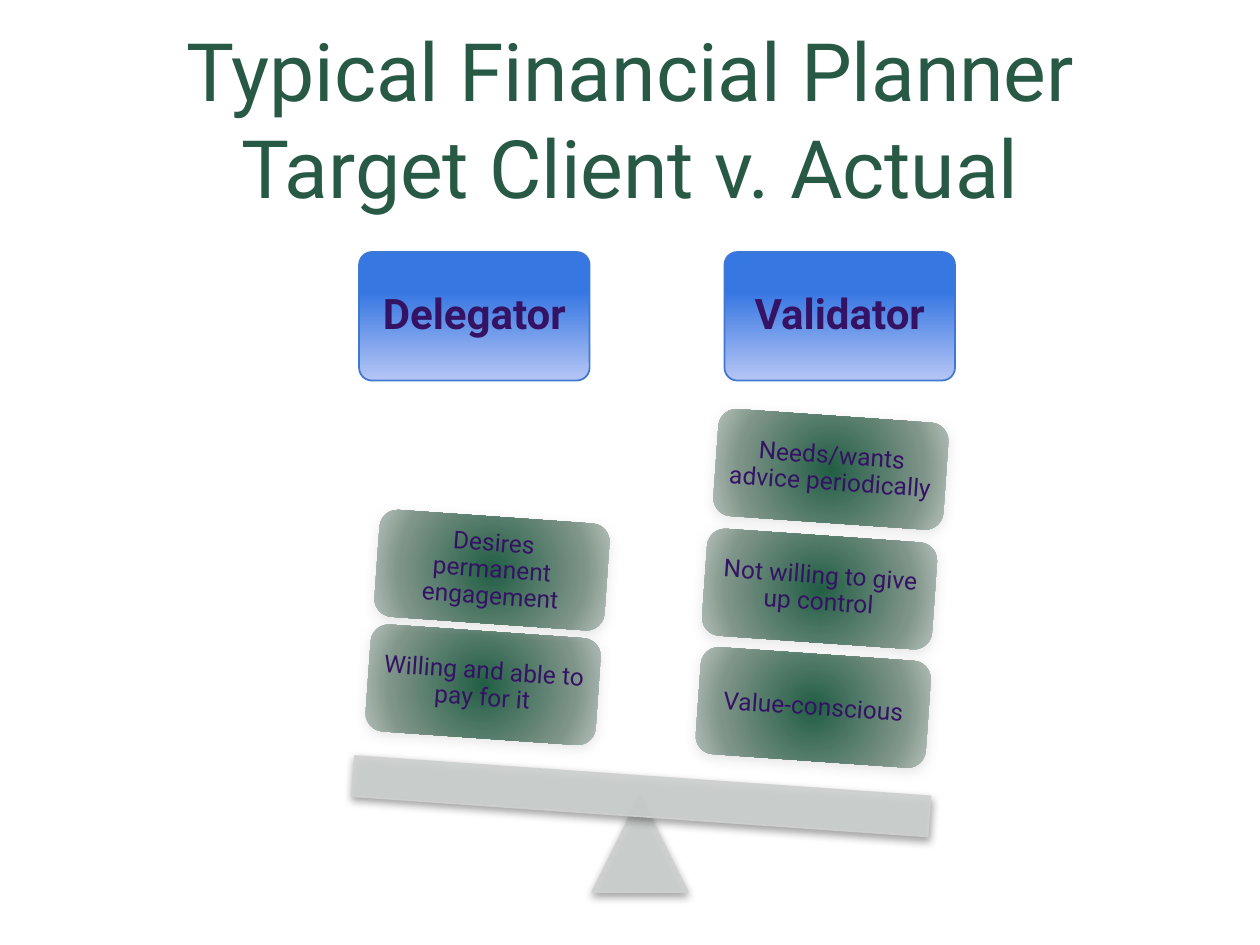
"""Build a slide that weighs the target client against the actual one."""
from pptx import Presentation, util as u
from pptx.dml.color import RGBColor
from pptx.enum import shapes as sh, text as tx
from pptx.oxml import parse_xml
from pptx.oxml.ns import nsdecls, qn

INK, GREEN, GRAY = "341364", "275944", "CDD1CF"
TILT = 4
HEADS = [(2.85, "Delegator"), (5.75, "Validator")]
CARDS = [
    (5.54, 5.19, "Value-conscious"),
    (5.59, 4.25, "Not willing to give up control"),
    (5.68, 3.3, "Needs/wants advice periodically"),
    (2.92, 5.01, "Willing and able to pay for it"),
    (2.99, 4.1, "Desires permanent engagement"),
]
BLUES = [(31, "3777E2"), (100, "B6C6F5")]
GREENS = [(0, "225E45"), (69, "7E9488"), (100, "BCC5C0")]
LINEAR = '<a:lin ang="5400000" scaled="0"/>'
RADIAL = ('<a:path path="circle"><a:fillToRect l="100000" t="100000" '
          'r="100000" b="100000"/></a:path>')


def color(code):
    """Turn a hex string into a colour."""
    return RGBColor.from_string(code)


def write(shape, words, size, code, inset=0.1, bold=False, space=1.0,
          anchor=tx.MSO_ANCHOR.MIDDLE):
    """Set centred text in a shape."""
    frame = shape.text_frame
    frame.word_wrap = True
    frame.vertical_anchor = anchor
    frame.margin_left = frame.margin_right = u.Inches(inset)
    frame.margin_top = frame.margin_bottom = u.Inches(inset)
    frame.text = words
    para = frame.paragraphs[0]
    para.alignment = tx.PP_ALIGN.CENTER
    para.line_spacing = space
    font = para.runs[0].font
    font.name, font.size, font.bold = "Roboto", u.Pt(size), bold
    font.color.rgb = color(code)


def block(slide, kind, box, turn=0):
    """Add a plain shape without a shadow."""
    shape = slide.shapes.add_shape(kind, *map(u.Inches, box))
    shape.rotation = turn
    shape.shadow.inherit = False
    return shape


def blend(shape, stops, way):
    """Fill a shape with a gradient."""
    marks = "".join(f'<a:gs pos="{pos * 1000}"><a:srgbClr val="{code}"/></a:gs>'
                    for pos, code in stops)
    fill = parse_xml(f'<a:gradFill {nsdecls("a")} rotWithShape="1">'
                     f'<a:gsLst>{marks}</a:gsLst>{way}</a:gradFill>')
    shape.element.spPr.find(qn("a:prstGeom")).addnext(fill)


def shade(shape, code, blur):
    """Drop a soft shadow below a shape."""
    shape.element.spPr.find(qn("a:effectLst")).append(parse_xml(
        f'<a:outerShdw {nsdecls("a")} blurRad="{u.Pt(blur)}" dist="{u.Pt(2)}" '
        f'dir="5400000" rotWithShape="0"><a:srgbClr val="{code}">'
        '<a:alpha val="40000"/></a:srgbClr></a:outerShdw>'))


def head(slide, left, words):
    """Add the heading of one side."""
    shape = block(slide, sh.MSO_SHAPE.ROUNDED_RECTANGLE, (left, 2, 1.83, 1.02))
    shape.adjustments[0] = 0.1
    blend(shape, BLUES, LINEAR)
    shape.line.color.rgb = color("4077D3")
    shape.line.width = u.Pt(1)
    write(shape, words, 24, INK, bold=True, space=0.9)


def card(slide, left, top, words):
    """Add one tilted weight."""
    shape = block(slide, sh.MSO_SHAPE.ROUNDED_RECTANGLE,
                  (left, top, 1.83, 0.85), TILT)
    blend(shape, GREENS, RADIAL)
    shape.line.fill.background()
    shade(shape, "C0C0C0", 7)
    write(shape, words, 14, INK, inset=0.06, space=0.9)


def part(slide, kind, box, turn=0):
    """Add one translucent part of the scale."""
    shape = block(slide, kind, box, turn)
    shape.fill.solid()
    shape.fill.fore_color.rgb = color(GRAY)
    shape.line.color.rgb = color(GRAY)
    shape.line.width = u.Pt(1)
    for tint in shape.element.spPr.iter(qn("a:srgbClr")):
        tint.append(parse_xml(f'<a:alpha {nsdecls("a")} val="90000"/>'))
    shade(shape, "000000", 5)


def title(slide, words):
    """Add the slide title."""
    box = slide.shapes.add_textbox(*map(u.Inches, (0.6, 0.29, 8.8, 1.46)))
    write(box, words, 46, GREEN, inset=0.05, anchor=tx.MSO_ANCHOR.BOTTOM)


def main():
    """Build and save the slide."""
    deck = Presentation()
    deck.slide_width, deck.slide_height = u.Inches(10), u.Inches(7.5)
    slide = deck.slides.add_slide(deck.slide_layouts[6])
    for item in HEADS:
        head(slide, *item)
    part(slide, sh.MSO_SHAPE.ISOSCELES_TRIANGLE, (4.7, 6.32, 0.76, 0.76))
    part(slide, sh.MSO_SHAPE.RECTANGLE, (2.8, 6.16, 4.58, 0.32), TILT)
    for item in CARDS:
        card(slide, *item)
    title(slide, "Typical Financial Planner Target Client v. Actual")
    deck.save("out.pptx")


if __name__ == "__main__":
    main()
